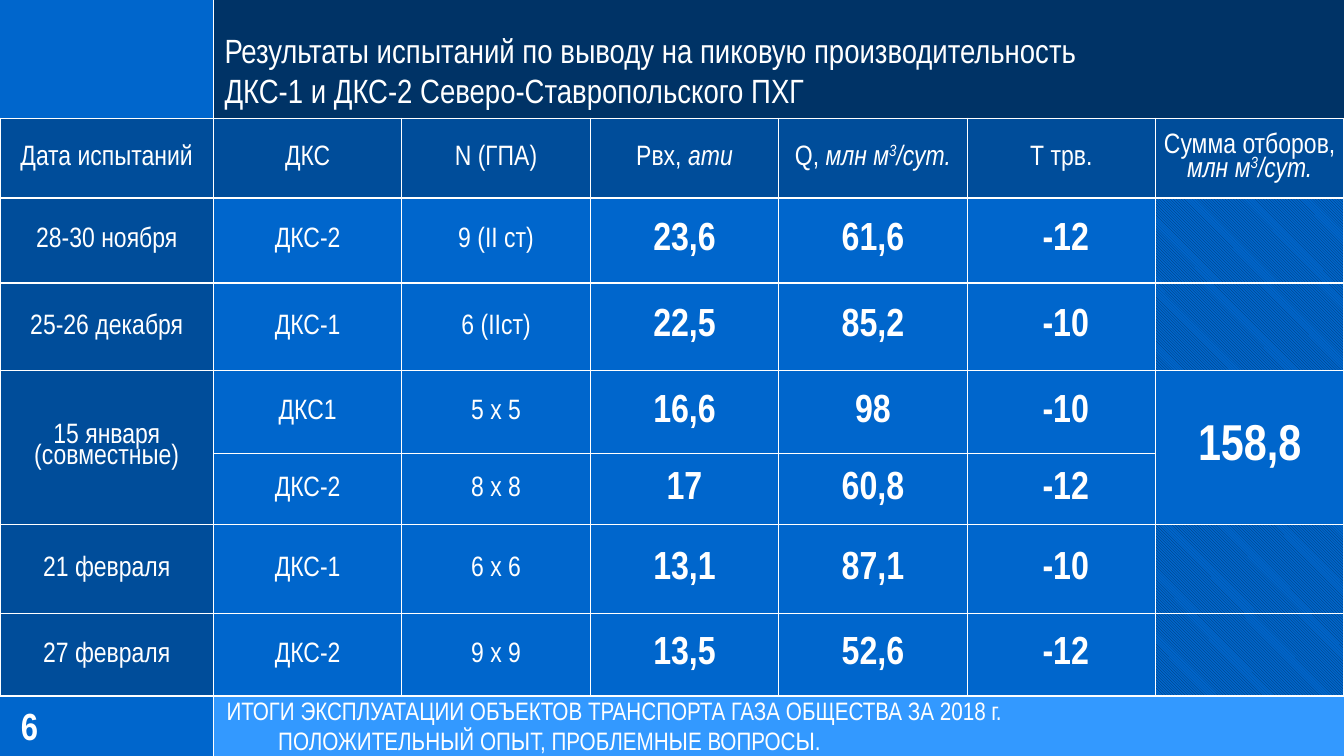
from lxml import etree
from pptx import Presentation
from pptx import util as u
from pptx.dml.color import RGBColor
from pptx.enum import dml, shapes, text
from pptx.oxml import ns

WHITE = RGBColor(0xFF, 0xFF, 0xFF)
NAVY = RGBColor(0x00, 0x33, 0x66)
DEEP = RGBColor(0x00, 0x4D, 0x9A)
BLUE = RGBColor(0x00, 0x66, 0xCC)
SKY = RGBColor(0x33, 0x99, 0xFF)

WIDTH, HEIGHT = 33.87, 19.05
SIDE = 5.38
HEAD, FOOT = 3.0, 17.55
ITALIC = {"italic": True}
CUBIC = [("млн м", ITALIC), ("3", {"italic": True, "raised": True}), ("/сут.", ITALIC)]

HEADERS = [
    [("Дата испытаний", {})],
    [("ДКС", {})],
    [("N (ГПА)", {})],
    [("Рвх, ", {}), ("ати", ITALIC)],
    [("Q, ", {})] + CUBIC,
    [("Т трв.", {})],
    [("Сумма отборов, ", {})] + CUBIC,
]
TESTS = [
    ["28-30 ноября", "ДКС-2", "9 (II cт)", "23,6", "61,6", " -12", ""],
    ["25-26 декабря", "ДКС-1", "6 (IIст)", "22,5", "85,2", " -10", ""],
    ["15 января (совместные)", "ДКС1", "5 х 5", "16,6", "98", " -10", "158,8"],
    ["", "ДКС-2", "8 х 8", "17", "60,8", " -12", ""],
    ["21 февраля", "ДКС-1", "6 х 6", "13,1", "87,1", " -10", ""],
    ["27 февраля", "ДКС-2", "9 х 9", "13,5", "52,6", " -12", ""],
]
COLUMNS = [SIDE] + [(WIDTH - SIDE) / 6] * 6
ROWS = [2.01, 2.14, 2.21, 2.08, 1.8, 2.24, 2.08]
JOINT_ROW = 3
PLAIN = {"size": u.Pt(20), "bold": False}
FIGURE = {"size": u.Pt(28), "bold": True}
TOTAL = {"size": u.Pt(36), "bold": True}


class Deck:
    font = "Arial Narrow"

    def __init__(self):
        self.prs = Presentation()
        self.prs.slide_width, self.prs.slide_height = u.Cm(WIDTH), u.Cm(HEIGHT)
        self.slide = self.prs.slides.add_slide(self.prs.slide_layouts[6])

    def bar(self, left, top, width, height, color):
        bar = self.slide.shapes.add_shape(
            shapes.MSO_SHAPE.RECTANGLE, *map(u.Cm, (left, top, width, height)))
        bar.shadow.inherit = False
        bar.fill.solid()
        bar.fill.fore_color.rgb = color
        bar.line.fill.background()

    def rule(self, *ends):
        rule = self.slide.shapes.add_connector(
            shapes.MSO_CONNECTOR.STRAIGHT, *map(u.Cm, ends))
        rule.line.color.rgb = WHITE
        rule.line.width = u.Pt(1.25)
        etree.SubElement(rule._element.spPr, ns.qn("a:effectLst"))

    def add_words(self, paragraph, runs, style):
        for words, extra in runs:
            run = paragraph.add_run()
            run.text = words
            run.font.color.rgb = WHITE
            for key, value in {"name": self.font, **style, **extra}.items():
                if key == "raised":
                    run._r.get_or_add_rPr().set("baseline", "30000")
                else:
                    setattr(run.font, key, value)

    def label(self, box, lines, style, anchor, inset=0.33, hanging=0):
        frame = self.slide.shapes.add_textbox(*map(u.Cm, box)).text_frame
        layout = {
            "word_wrap": True, "vertical_anchor": anchor,
            "margin_left": u.Cm(inset), "margin_right": u.Cm(0.33),
            "margin_top": u.Cm(0.18), "margin_bottom": u.Cm(0.18),
        }
        for key, value in layout.items():
            setattr(frame, key, value)
        paragraph = frame.paragraphs[0]
        if hanging:
            indent = paragraph._p.get_or_add_pPr()
            indent.set("marL", str(u.Cm(hanging)))
            indent.set("indent", str(-u.Cm(hanging)))
        for number, line in enumerate(lines):
            if number:
                paragraph.add_line_break()
            self.add_words(paragraph, [(line, {})], style)

    def cell(self, cell, runs, style, color, sides, inset, spacing=None):
        margins = {"margin_left": inset, "margin_right": inset,
                   "margin_top": 0, "margin_bottom": 0}
        for key, value in margins.items():
            setattr(cell, key, u.Cm(value))
        cell.vertical_anchor = text.MSO_ANCHOR.MIDDLE
        if color:
            cell.fill.solid()
            cell.fill.fore_color.rgb = color
        else:
            cell.fill.patterned()
            cell.fill.pattern = dml.MSO_PATTERN.LIGHT_DOWNWARD_DIAGONAL
            cell.fill.fore_color.rgb = NAVY
            cell.fill.back_color.rgb = BLUE
        properties = cell._tc.get_or_add_tcPr()
        for position, side in enumerate(sides):
            border = etree.Element(ns.qn(f"a:ln{side}"), w=str(u.Pt(1)))
            solid = etree.SubElement(border, ns.qn("a:solidFill"))
            etree.SubElement(solid, ns.qn("a:srgbClr"), val=str(WHITE))
            properties.insert(position, border)
        paragraph = cell.text_frame.paragraphs[0]
        paragraph.alignment = text.PP_ALIGN.CENTER
        if spacing:
            paragraph.line_spacing = spacing
        self.add_words(paragraph, runs, style)

    def table(self, left, top):
        table = self.slide.shapes.add_table(
            len(ROWS), len(COLUMNS), u.Cm(left), u.Cm(top),
            u.Cm(sum(COLUMNS)), u.Cm(sum(ROWS))).table
        for column, width in zip(table.columns, COLUMNS):
            column.width = u.Cm(width)
        for row, height in zip(table.rows, ROWS):
            row.height = u.Cm(height)
        last = len(COLUMNS) - 1
        for col in (0, last):
            table.cell(JOINT_ROW, col).merge(table.cell(JOINT_ROW + 1, col))
        content = [HEADERS] + [[[(v, {})] if v else [] for v in test] for test in TESTS]
        for row, values in enumerate(content):
            for col, runs in enumerate(values):
                joint = row in (JOINT_ROW, JOINT_ROW + 1)
                color = DEEP if row == 0 or col == 0 else BLUE
                if col == last and row and not joint:
                    color = None
                style = PLAIN if row == 0 or col < 3 else TOTAL if col == last else FIGURE
                sides = [s for s, shown in (("L", col > 0), ("R", col < last),
                                            ("T", True), ("B", True)) if shown]
                spacing = 0.9 if row == 0 else 0.8 if joint and col == 0 else None
                self.cell(table.cell(row, col), runs, style, color, sides,
                          0.1 if row == 0 else 0.03, spacing)


def main():
    deck = Deck()
    deck.bar(SIDE, 0, WIDTH - SIDE, HEAD, NAVY)
    deck.bar(SIDE, FOOT, WIDTH - SIDE, HEIGHT - FOOT, SKY)
    deck.bar(0, 0, SIDE, HEAD, BLUE)
    deck.bar(0, FOOT, SIDE, HEIGHT - FOOT, BLUE)
    deck.rule(SIDE, HEIGHT, SIDE, 0)
    deck.bar(0, HEAD, WIDTH, FOOT - HEAD, BLUE)
    for level in (HEAD, FOOT):
        deck.rule(WIDTH, level, 0, level)
    deck.label((SIDE, 17.53, 28.48, 1.5),
               ["ИТОГИ ЭКСПЛУАТАЦИИ ОБЪЕКТОВ ТРАНСПОРТА ГАЗА ОБЩЕСТВА ЗА 2018 г.",
                "ПОЛОЖИТЕЛЬНЫЙ ОПЫТ, ПРОБЛЕМНЫЕ ВОПРОСЫ."],
               {"size": u.Pt(18)}, text.MSO_ANCHOR.MIDDLE, hanging=1.3)
    deck.label((5.33, 0, 28.48, 2.97),
               ["Результаты испытаний по выводу на пиковую производительность",
                "ДКС-1 и ДКС-2 Северо-Ставропольского ПХГ"],
               {"size": u.Pt(24)}, text.MSO_ANCHOR.BOTTOM)
    deck.label((0, 17.53, SIDE, 1.5), ["6"], {"size": u.Pt(27), "bold": True},
               text.MSO_ANCHOR.MIDDLE, inset=0.53)
    deck.table(0, 2.98)
    deck.prs.save("out.pptx")


if __name__ == "__main__":
    main()
